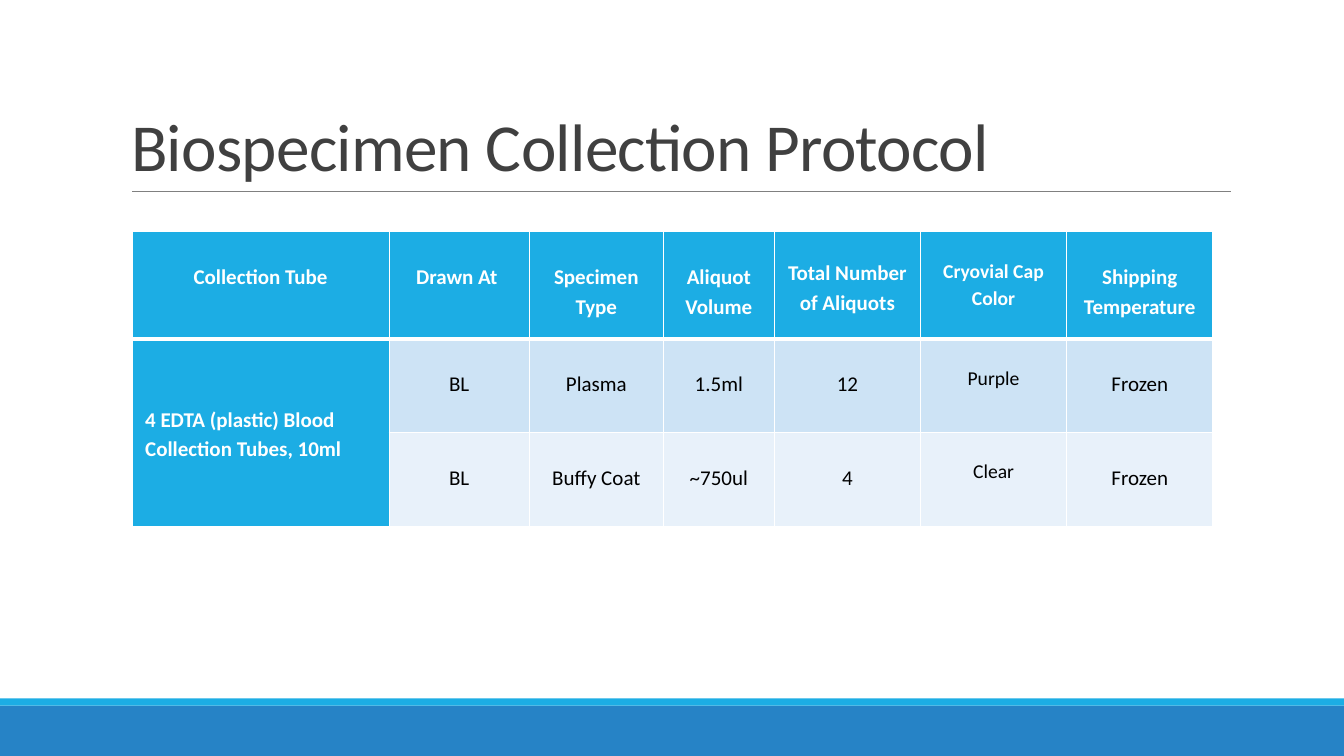
from lxml.etree import SubElement
from pptx import Presentation
from pptx.dml.color import RGBColor
from pptx.enum.shapes import MSO_CONNECTOR, MSO_SHAPE
from pptx.enum.text import MSO_ANCHOR, PP_ALIGN
from pptx.oxml.ns import qn
from pptx.util import Inches, Pt

WHITE = RGBColor(0xFF, 0xFF, 0xFF)
BLACK = RGBColor(0, 0, 0)
CYAN = RGBColor(0x1C, 0xAD, 0xE4)
BLUE = RGBColor(0x26, 0x83, 0xC6)
GRAY = RGBColor(0x80, 0x80, 0x80)
TITLE_GRAY = RGBColor(0x40, 0x40, 0x40)
PALE = RGBColor(0xCD, 0xE3, 0xF5)
PALER = RGBColor(0xE8, 0xF1, 0xFA)

# Content
TITLE = "Biospecimen Collection Protocol"
PROTOCOL = [
    ["Collection Tube", "Drawn At ", "Specimen Type", "Aliquot Volume",
     "Total Number of Aliquots", "Cryovial Cap Color", "Shipping Temperature"],
    ["4 EDTA (plastic) Blood Collection Tubes, 10ml",
     "BL", "Plasma", "1.5ml", "12", "Purple", "Frozen"],
    ["", "BL", "Buffy Coat", "~750ul", "4", "Clear", "Frozen"],
]
COLUMN_WIDTHS = [2.55, 1.39, 1.33, 1.1, 1.45, 1.45, 1.45]
ROW_HEIGHTS = [1.06, 0.93, 0.93]
ROW_FILLS = [CYAN, PALE, PALER]
FOOTER_BANDS = [(7, 0.5, BLUE), (6.93, 0.07, CYAN)]  # top, height, fill
TUBE_COLUMN, TOTAL_COLUMN, CAP_COLUMN = 0, 4, 5

HEADING_FONT = {"name": "Calibri", "size": Pt(15), "bold": True}
VALUE_FONT = {**HEADING_FONT, "bold": False}
TITLE_FONT = {"name": "Calibri", "size": Pt(48), "bold": False}


def set_all(target, values):
    for name, value in values.items():
        setattr(target, name, value)


def write(frame, text, font, color, align, line_spacing=None):
    paragraph = frame.paragraphs[0]
    set_all(paragraph, {"alignment": align, "line_spacing": line_spacing})
    run = paragraph.add_run()
    run.text = text
    set_all(run.font, font)
    run.font.color.rgb = color
    return run


def add_borders(cell, widths):
    properties = cell._tc.get_or_add_tcPr()
    for side, points in widths.items():
        border = SubElement(properties, qn(f"a:ln{side}"), w=str(Pt(points)))
        fill = SubElement(border, qn("a:solidFill"))
        SubElement(fill, qn("a:srgbClr"), val=str(WHITE))


def top_gap(row, column):
    if row and column == TUBE_COLUMN:
        return 0.64
    if column == CAP_COLUMN:
        return 0.24
    if row == 0 and column == TOTAL_COLUMN:
        return 0.25
    return 0.29


deck = Presentation()
deck.slide_width, deck.slide_height = Inches(13.33), Inches(7.5)
slide = deck.slides.add_slide(deck.slide_layouts[6])

# Footer bands
for top, height, color in FOOTER_BANDS:
    band = slide.shapes.add_shape(MSO_SHAPE.RECTANGLE, 0, Inches(top),
                                  deck.slide_width, Inches(height))
    band.shadow.inherit = False
    band.fill.solid()
    band.fill.fore_color.rgb = color
    band.line.fill.background()

# Title and its rule
rule = slide.shapes.add_connector(MSO_CONNECTOR.STRAIGHT, Inches(1.31),
                                  Inches(1.9), Inches(12.21), Inches(1.9))
rule.line.color.rgb = GRAY
rule.line.width = Pt(0.5)
SubElement(rule._element.spPr, qn("a:effectLst"))

title_box = slide.shapes.add_textbox(Inches(1.3), Inches(1.01),
                                     Inches(8.92), Inches(0.82))
set_all(title_box.text_frame, {
    "word_wrap": True, "vertical_anchor": MSO_ANCHOR.BOTTOM,
    "margin_left": 0, "margin_right": 0,
    "margin_top": Inches(0.01), "margin_bottom": 0})
title_run = write(title_box.text_frame, TITLE, TITLE_FONT, TITLE_GRAY, PP_ALIGN.LEFT)
title_run.font._element.set("spc", "-54")

# Protocol table
protocol = slide.shapes.add_table(
    len(ROW_HEIGHTS), len(COLUMN_WIDTHS), Inches(1.31), Inches(2.3),
    Inches(sum(COLUMN_WIDTHS)), Inches(sum(ROW_HEIGHTS))).table
for column, width in zip(protocol.columns, COLUMN_WIDTHS):
    column.width = Inches(width)
for row, height in zip(protocol.rows, ROW_HEIGHTS):
    row.height = Inches(height)
protocol.cell(1, TUBE_COLUMN).merge(protocol.cell(2, TUBE_COLUMN))

for r, texts in enumerate(PROTOCOL):
    for c, text in enumerate(texts):
        cell = protocol.cell(r, c)
        is_tube = r > 0 and c == TUBE_COLUMN
        is_heading = r == 0 or is_tube
        side_gap = Inches(0.13 if is_tube else 0.1)
        set_all(cell, {"margin_left": side_gap, "margin_right": side_gap,
                       "margin_top": Inches(top_gap(r, c)), "margin_bottom": 0,
                       "vertical_anchor": MSO_ANCHOR.TOP})
        add_borders(cell, {"L": 1, "R": 1, "T": 3 if r == 1 else 1,
                           "B": 3 if r == 0 else 1})
        cell.fill.solid()
        cell.fill.fore_color.rgb = CYAN if is_heading else ROW_FILLS[r]
        if text:
            font = dict(HEADING_FONT if is_heading else VALUE_FONT)
            if c == CAP_COLUMN:
                font["size"] = Pt(14)
            write(cell.text_frame, text, font, WHITE if is_heading else BLACK,
                  PP_ALIGN.LEFT if is_tube else PP_ALIGN.CENTER, 1.15)

deck.save("out.pptx")
